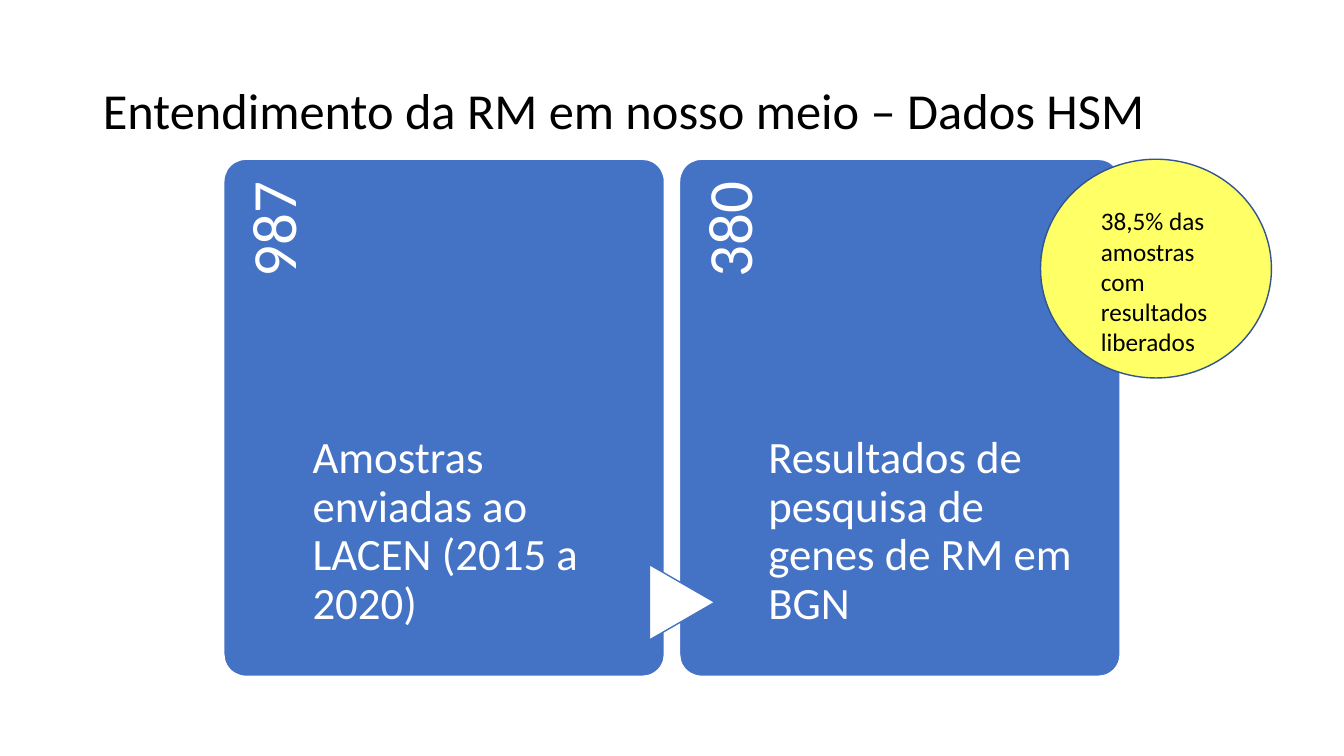
from dataclasses import dataclass

from pptx import Presentation
from pptx.dml.color import RGBColor
from pptx.enum.shapes import MSO_SHAPE as Shape
from pptx.enum.text import MSO_ANCHOR as Anchor
from pptx.enum.text import MSO_AUTO_SIZE as AutoSize
from pptx.enum.text import PP_ALIGN as Align
from pptx.shapes.autoshape import Shape as AutoShape
from pptx.slide import Slide
from pptx.util import Inches, Pt

BLACK = RGBColor(0x00, 0x00, 0x00)
WHITE = RGBColor(0xFF, 0xFF, 0xFF)
BLUE = RGBColor(0x44, 0x72, 0xC4)
YELLOW = RGBColor(0xFF, 0xFF, 0x66)
NAVY = RGBColor(0x32, 0x54, 0x91)

FONT = "Calibri"
PANEL_LEFT, PANEL_TOP = 2.22, 1.58
PANEL_WIDTH, PANEL_HEIGHT = 4.37, 5.13
PANEL_STEP = 4.52


@dataclass(frozen=True)
class Box:
    left: float
    top: float
    width: float
    height: float

    def lengths(self) -> tuple:
        return tuple(map(Inches, (self.left, self.top, self.width, self.height)))


@dataclass(frozen=True)
class Panel:
    count: str
    caption: str


PANELS = (
    Panel("987", "Amostras enviadas ao LACEN (2015 a 2020)"),
    Panel("380", "Resultados de pesquisa de genes de RM em BGN"),
)


def apply(target: object, values: dict) -> None:
    for name, value in values.items():
        setattr(target, name, value)


def write(shape: AutoShape, text: str, size: float, color: RGBColor,
          frame_format: dict, para_format: dict) -> None:
    frame = shape.text_frame
    apply(frame, {"word_wrap": True, "auto_size": AutoSize.NONE, **frame_format})
    para = frame.paragraphs[0]
    apply(para, {"alignment": Align.LEFT, **para_format})
    span = para.add_run()
    span.text = text
    apply(span.font, {"name": FONT, "size": Pt(size)})
    span.font.color.rgb = color


def add_figure(page: Slide, kind: Shape, box: Box,
               fill: RGBColor, line: RGBColor) -> AutoShape:
    figure = page.shapes.add_shape(kind, *box.lengths())
    figure.shadow.inherit = False
    figure.fill.solid()
    figure.fill.fore_color.rgb = fill
    figure.line.color.rgb = line
    figure.line.width = Pt(1)
    return figure


def add_panel(page: Slide, panel: Panel, left: float) -> None:
    card = add_figure(page, Shape.ROUNDED_RECTANGLE,
                      Box(left, PANEL_TOP, PANEL_WIDTH, PANEL_HEIGHT), BLUE, WHITE)
    card.adjustments[0] = 0.05

    # Count, reading upwards along the left edge
    count = page.shapes.add_textbox(*Box(left - 1.66, 3.25, 4.21, 0.87).lengths())
    count.rotation = 270
    write(count, panel.count, 45, WHITE,
          {"margin_left": 0, "margin_top": Inches(0.17),
           "margin_right": Inches(0.22), "margin_bottom": 0},
          {"alignment": Align.RIGHT, "line_spacing": 0.9})

    # Caption, resting near the bottom
    caption = page.shapes.add_textbox(
        *Box(left + 0.88, PANEL_TOP, 3.25, PANEL_HEIGHT).lengths())
    write(caption, panel.caption, 32, WHITE,
          {"margin_left": 0, "margin_top": Inches(0.12), "margin_right": 0,
           "margin_bottom": Inches(0.47), "vertical_anchor": Anchor.BOTTOM},
          {"line_spacing": 0.9})


def main() -> None:
    deck = Presentation()
    apply(deck, {"slide_width": Inches(13.33), "slide_height": Inches(7.5)})
    page = deck.slides.add_slide(deck.slide_layouts[5])

    # Title
    title = page.shapes.title
    apply(title, dict(zip(("left", "top", "width", "height"),
                          Box(0.92, 0.4, 11.5, 1.45).lengths())))
    write(title, "Entendimento da RM em nosso meio – Dados HSM", 36, BLACK,
          {"vertical_anchor": Anchor.MIDDLE}, {"line_spacing": 0.9})

    # Panels and the arrow between them
    for index, panel in enumerate(PANELS):
        add_panel(page, panel, PANEL_LEFT + index * PANEL_STEP)
    arrow = add_figure(page, Shape.FLOWCHART_EXTRACT,
                       Box(6.39, 5.65, 0.75, 0.65), WHITE, BLUE)
    arrow.rotation = 90

    # Percentage badge
    add_figure(page, Shape.OVAL, Box(10.32, PANEL_TOP, 2.29, 2.17), YELLOW, NAVY)
    note = page.shapes.add_textbox(*Box(10.82, 1.99, 1.31, 1.62).lengths())
    write(note, "38,5% das amostras com resultados liberados", 18, BLACK,
          {"auto_size": AutoSize.SHAPE_TO_FIT_TEXT}, {})

    deck.save("out.pptx")


if __name__ == "__main__":
    main()
